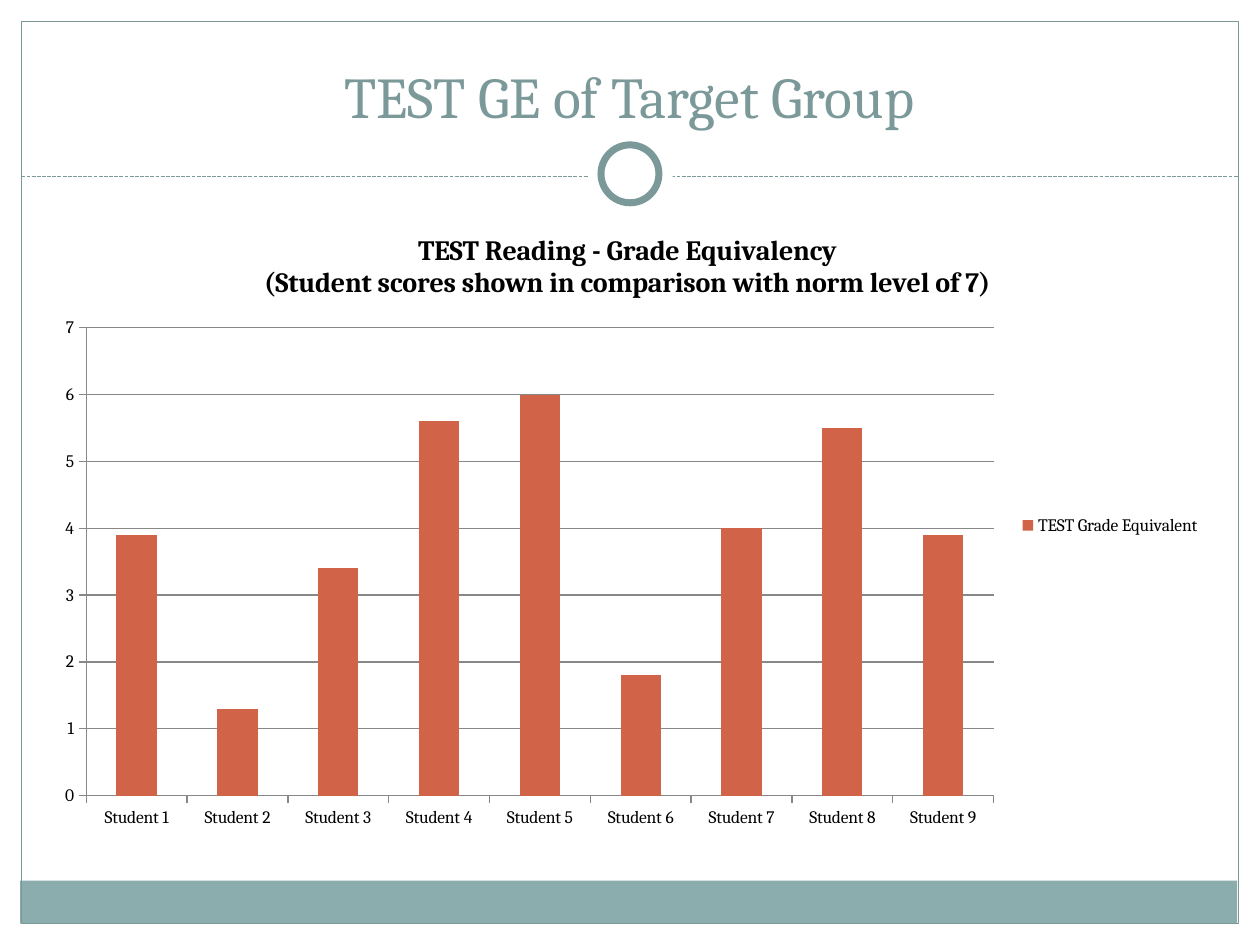
from pptx import Presentation
from pptx.chart.data import CategoryChartData
from pptx.dml.color import RGBColor
from pptx.enum.chart import XL_CHART_TYPE, XL_LEGEND_POSITION, XL_TICK_MARK
from pptx.enum.dml import MSO_LINE
from pptx.enum.shapes import MSO_CONNECTOR, MSO_SHAPE
from pptx.enum.text import MSO_ANCHOR, PP_ALIGN
from pptx.oxml.ns import qn
from pptx.util import Inches, Pt
from lxml import etree

RECTANGLE, OVAL = MSO_SHAPE.RECTANGLE, MSO_SHAPE.OVAL
STRAIGHT = MSO_CONNECTOR.STRAIGHT
DASH = MSO_LINE.SQUARE_DOT
CENTER, BOTTOM = PP_ALIGN.CENTER, MSO_ANCHOR.BOTTOM
COLUMNS = XL_CHART_TYPE.COLUMN_CLUSTERED
RIGHT = XL_LEGEND_POSITION.RIGHT
OUTSIDE = XL_TICK_MARK.OUTSIDE

FONT = "Cambria"
COLORS = {
    "white": "FFFFFF",
    "teal": "7C999A",
    "band": "8CADAE",
    "bar": "D16349",
    "text": "000000",
    "grid": "888888",
}
SCORES = [3.9, 1.3, 3.4, 5.6, 6, 1.8, 4, 5.5, 3.9]
CHART_TITLE = [
    "TEST Reading - Grade Equivalency",
    "(Student scores shown in comparison with norm level of 7)",
]


class SlideBuilder:
    """Holds the style and the current slide."""

    def __init__(self, page):
        self.page = page

    def color(self, name):
        return RGBColor.from_string(COLORS[name])

    def style_font(self, font, size, color, bold=False):
        font.name = FONT
        font.size = Pt(size)
        font.bold = bold
        font.color.rgb = self.color(color)

    def style_line(self, line, color, width):
        line.color.rgb = self.color(color)
        line.width = Pt(width)

    def shape(self, kind, left, top, width, height, fill=None, line_width=None):
        box = self.page.shapes.add_shape(
            kind, Inches(left), Inches(top), Inches(width), Inches(height))
        box.shadow.inherit = False
        if fill:
            box.fill.solid()
            box.fill.fore_color.rgb = self.color(fill)
        else:
            box.fill.background()
        if line_width:
            self.style_line(box.line, "teal", line_width)
        else:
            box.line.fill.background()

    def divider(self, left, right, top):
        rule = self.page.shapes.add_connector(
            STRAIGHT, Inches(left), Inches(top), Inches(right), Inches(top))
        self.style_line(rule.line, "teal", 0.75)
        rule.line.dash_style = DASH
        etree.SubElement(rule._element.spPr, qn("a:effectLst"))

    def title(self, text, left, top, width, height):
        box = self.page.shapes.title
        box.left, box.top = Inches(left), Inches(top)
        box.width, box.height = Inches(width), Inches(height)
        box.text_frame.vertical_anchor = BOTTOM
        para = box.text_frame.paragraphs[0]
        para.alignment = CENTER
        span = para.add_run()
        span.text = text
        self.style_font(span.font, 33, "teal")

    def chart(self, title_lines, series_name, scores, left, top, width, height):
        data = CategoryChartData()
        data.categories = [f"Student {n}" for n in range(1, len(scores) + 1)]
        data.add_series(series_name, scores)
        chart = self.page.shapes.add_chart(
            COLUMNS, Inches(left), Inches(top), Inches(width), Inches(height), data).chart
        self.style_font(chart.font, 10, "text")
        self.chart_title(chart, title_lines)

        chart.has_legend = True
        chart.legend.position = RIGHT
        chart.legend.include_in_layout = False

        plot = chart.plots[0]
        plot.vary_by_categories = False
        plot.gap_width = 150
        fill = plot.series[0].format.fill
        fill.solid()
        fill.fore_color.rgb = self.color("bar")

        for axis in (chart.category_axis, chart.value_axis):
            axis.major_tick_mark = OUTSIDE
            self.style_line(axis.format.line, "grid", 0.75)
        axis = chart.value_axis
        axis.minimum_scale, axis.maximum_scale, axis.major_unit = 0, 7, 1
        axis.has_major_gridlines = True
        self.style_line(axis.major_gridlines.format.line, "grid", 0.75)

    def chart_title(self, chart, lines):
        chart.has_title = True
        chart.chart_title.include_in_layout = False
        frame = chart.chart_title.text_frame
        for index, text in enumerate(lines):
            para = frame.add_paragraph() if index else frame.paragraphs[0]
            span = para.add_run()
            span.text = text
            self.style_font(span.font, 16, "text", bold=True)


def main():
    deck = Presentation()
    deck.slide_width, deck.slide_height = Inches(10), Inches(7.5)
    page = deck.slides.add_slide(deck.slide_layouts[5])
    builder = SlideBuilder(page)

    builder.shape(RECTANGLE, 0.16, 6.99, 9.66, 0.34, fill="band")
    builder.shape(RECTANGLE, 0.17, 0.17, 9.66, 7.16, line_width=0.75)
    builder.divider(0.17, 9.83, 1.4)
    builder.shape(OVAL, 4.67, 1.05, 0.67, 0.67, fill="white")
    builder.shape(OVAL, 4.77, 1.15, 0.46, 0.46, fill="white", line_width=4)
    builder.title("TEST GE of Target Group", 0.33, 0.25, 9.33, 0.83)
    builder.chart(CHART_TITLE, "TEST Grade Equivalent", SCORES, 0.33, 1.67, 9.3, 5)

    deck.save("out.pptx")


if __name__ == "__main__":
    main()
